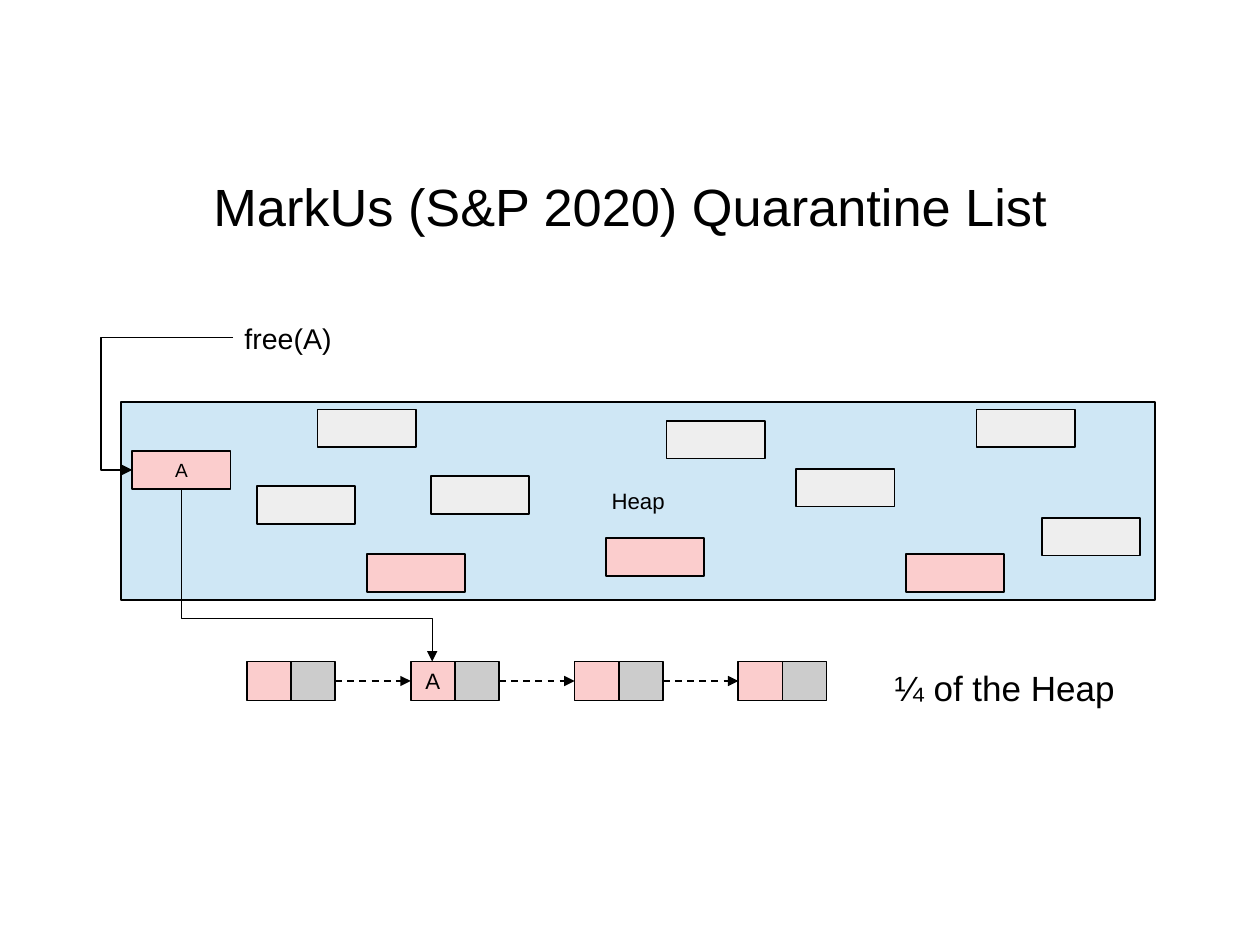
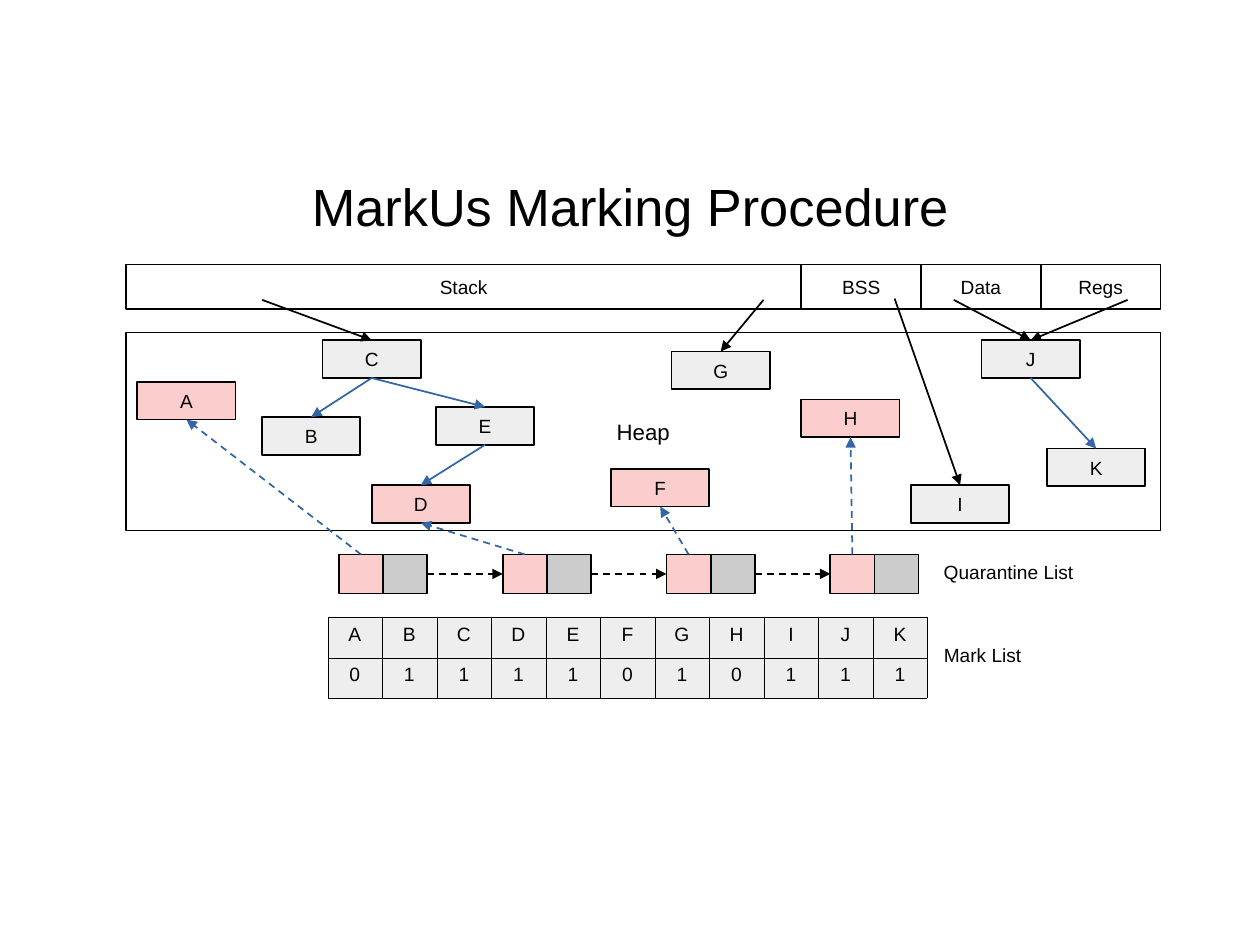
from dataclasses import dataclass

import lxml.etree
import pptx
import pptx.dml.color
import pptx.enum.dml
import pptx.enum.shapes
import pptx.enum.text
import pptx.oxml.ns
import pptx.util

Inches = pptx.util.Inches
Pt = pptx.util.Pt
RGBColor = pptx.dml.color.RGBColor
Kind = pptx.enum.shapes.MSO_CONNECTOR
Align = pptx.enum.text.PP_ALIGN
Anchor = pptx.enum.text.MSO_ANCHOR
qn = pptx.oxml.ns.qn

BLACK = RGBColor(0, 0, 0)
WHITE = RGBColor(0xFF, 0xFF, 0xFF)
PINK = RGBColor(0xFB, 0xCD, 0xCD)
PALE = RGBColor(0xEE, 0xEE, 0xEE)
GREY = RGBColor(0xCC, 0xCC, 0xCC)
SKY = RGBColor(0xCF, 0xE7, 0xF5)
BLUE = RGBColor(0x34, 0x65, 0xA4)
FONT = "Arial"
SMALL, MID, TITLE = 10.9, 12.7, 29.9

HEAP_W, HEAP_H = 8.21, 1.57
BLOCK_W, BLOCK_H = 0.78, 0.3
CELL_W, CELL_H, PITCH = 0.35, 0.31, 1.3
TOP, LEFT, BOTTOM, RIGHT = range(4)


@dataclass
class Block:
    """A heap block, placed from the heap's top left corner."""
    name: str
    x: float
    y: float


@dataclass
class Root:
    name: str
    width: float


@dataclass
class Ref:
    """A pointer from a spot in the roots to a block."""
    x: float
    y: float
    to: str


BLOCKS = [
    Block("A", 0.09, 0.39), Block("B", 1.08, 0.67), Block("C", 1.56, 0.06),
    Block("D", 1.95, 1.21), Block("E", 2.46, 0.59), Block("F", 3.85, 1.08),
    Block("G", 4.33, 0.15), Block("H", 5.36, 0.53), Block("I", 6.23, 1.21),
    Block("J", 6.79, 0.06), Block("K", 7.31, 0.92),
]
ROOTS = [Root("Stack", 5.36), Root("BSS", 0.95), Root("Data", 0.95), Root("Regs", 0.95)]
REFS = [Ref(2.08, 2.38, "C"), Ref(6.06, 2.38, "G"), Ref(8.95, 2.38, "J"),
        Ref(7.57, 2.38, "J"), Ref(7.1, 2.37, "I")]
LINKS = ["CB", "CE", "ED", "JK"]
MARKS = "01111010111"


def style(para, size: float, align=Align.CENTER) -> None:
    para.alignment = align
    para.font.name = FONT
    para.font.size = Pt(size)
    para.font.color.rgb = BLACK


def pad(frame, x: float, y: float) -> None:
    frame.margin_left = frame.margin_right = Inches(x)
    frame.margin_top = frame.margin_bottom = Inches(y)


def page(deck, text: str):
    """Add a slide with its title."""
    slide = deck.slides.add_slide(deck.slide_layouts[5])
    title = slide.shapes.title
    title.left, title.top = Inches(0.5), Inches(1.16)
    title.width, title.height = Inches(9), Inches(0.94)
    frame = title.text_frame
    frame.text = text
    frame.vertical_anchor = Anchor.MIDDLE
    pad(frame, 0, 0)
    style(frame.paragraphs[0], TITLE)
    return slide


def box(slide, x: float, y: float, w: float, h: float, fill: RGBColor,
        text: str = "", size: float = SMALL):
    shape = slide.shapes.add_shape(
        pptx.enum.shapes.MSO_SHAPE.RECTANGLE, Inches(x), Inches(y), Inches(w), Inches(h))
    shape.shadow.inherit = False
    shape.fill.solid()
    shape.fill.fore_color.rgb = fill
    shape.line.color.rgb = BLACK
    shape.line.width = Pt(1)
    if text:
        frame = shape.text_frame
        frame.text = text
        frame.word_wrap = False
        frame.vertical_anchor = Anchor.MIDDLE
        style(frame.paragraphs[0], size)
    return shape


def label(slide, x: float, y: float, w: float, h: float, text: str, size: float) -> None:
    frame = slide.shapes.add_textbox(Inches(x), Inches(y), Inches(w), Inches(h)).text_frame
    frame.word_wrap = True
    pad(frame, 0.09, 0.04)
    frame.text = text
    style(frame.paragraphs[0], size, Align.LEFT)


def finish(line, color: RGBColor, width: float, dash: bool = False) -> None:
    """Give a connector its pen and arrowhead, and no shadow."""
    line.line.color.rgb = color
    line.line.width = Pt(width)
    if dash:
        line.line.dash_style = pptx.enum.dml.MSO_LINE.DASH
    props = line._element.spPr
    lxml.etree.SubElement(props.find(qn("a:ln")), qn("a:tailEnd"), type="triangle")
    lxml.etree.SubElement(props, qn("a:effectLst"))


def arrow(slide, start: tuple, end: tuple, color: RGBColor = BLACK,
          dash: bool = False) -> None:
    """Draw from (x, y) or (shape, side) to (shape, side)."""
    line = slide.shapes.add_connector(Kind.STRAIGHT, 0, 0, 0, 0)
    if isinstance(start[0], float):
        line.begin_x, line.begin_y = Inches(start[0]), Inches(start[1])
    else:
        line.begin_connect(*start)
    line.end_connect(*end)
    finish(line, color, 1, dash)


def elbow(slide, x1: float, y1: float, x2: float, y2: float, bend: float,
          down: bool = False) -> None:
    """Draw a bent arrow; one that leaves downwards is a turned sideways one."""
    if down:
        mx, my, dx, dy = (x1 + x2) / 2, (y1 + y2) / 2, (x2 - x1) / 2, (y2 - y1) / 2
        x1, y1, x2, y2 = mx + dy, my - dx, mx - dy, my + dx
    line = slide.shapes.add_connector(
        Kind.ELBOW, Inches(x1), Inches(y1), Inches(x2), Inches(y2))
    props = line._element.spPr
    if down:
        props.find(qn("a:xfrm")).set("rot", str(270 * 60000))
    guides = props.find(qn("a:prstGeom")).get_or_add_avLst()
    lxml.etree.SubElement(guides, qn("a:gd"), name="adj1", fmla=f"val {round(bend * 100000)}")
    finish(line, BLACK, 0.75)


def heap(slide, x: float, y: float, fill: RGBColor, freed: str, named: str) -> dict:
    """Draw the heap; return its blocks by name."""
    box(slide, x, y, HEAP_W, HEAP_H, fill, "Heap", MID)
    return {
        b.name: box(slide, x + b.x, y + b.y, BLOCK_W, BLOCK_H,
                    PINK if b.name in freed else PALE, b.name if b.name in named else "")
        for b in BLOCKS
    }


def chain(slide, x: float, y: float, names: list[str]) -> list:
    """Draw the quarantine list; return the first cell of each node."""
    heads, last = [], None
    for i, name in enumerate(names):
        left = x + i * PITCH
        head = box(slide, left, y, CELL_W, CELL_H, PINK, name, MID)
        tail = box(slide, left + CELL_W, y, CELL_W, CELL_H, GREY)
        if last is not None:
            arrow(slide, (last, RIGHT), (head, LEFT), dash=True)
        heads.append(head)
        last = tail
    return heads


def marks(slide, x: float, y: float, w: float, h: float) -> None:
    rows = ["".join(b.name for b in BLOCKS), MARKS]
    table = slide.shapes.add_table(
        len(rows), len(MARKS), Inches(x), Inches(y), Inches(w), Inches(h)).table
    table.first_row = table.horz_banding = False
    for r, row in enumerate(rows):
        for c, text in enumerate(row):
            cell = table.cell(r, c)
            cell.text = text
            pad(cell, 0.09, 0.05)
            style(cell.text_frame.paragraphs[0], 11)
            props = cell._tc.get_or_add_tcPr()
            for side in ("lnL", "lnR", "lnT", "lnB"):
                edge = lxml.etree.SubElement(props, qn(f"a:{side}"), w=str(Pt(0.11)))
                ink = lxml.etree.SubElement(edge, qn("a:solidFill"))
                lxml.etree.SubElement(ink, qn("a:srgbClr"), val=str(BLACK))
            cell.fill.solid()
            cell.fill.fore_color.rgb = PALE


def free_slide(deck) -> None:
    slide = page(deck, "MarkUs (S&P 2020) Quarantine List")
    label(slide, 1.85, 2.51, 0.95, 0.34, "free(A)", 16.3)
    heap(slide, 0.96, 3.19, SKY, "ADFI", "A")
    chain(slide, 1.96, 5.25, ["", "A", "", ""])
    # The freed block moves to the list
    elbow(slide, 1.85, 2.68, 1.05, 3.73, 1.31)
    elbow(slide, 1.44, 3.88, 3.43, 5.25, 0.75, down=True)
    label(slide, 7.01, 5.25, 1.95, 0.4, "¼ of the Heap", 20)


def mark_slide(deck) -> None:
    slide = page(deck, "MarkUs Marking Procedure")
    blocks = heap(slide, 1, 2.64, WHITE, "ADFH", "ABCDEFGHIJK")
    # Roots and their pointers
    x = 1.0
    for root in ROOTS:
        box(slide, x, 2.1, root.width, 0.35, WHITE, root.name)
        x += root.width
    for ref in REFS:
        arrow(slide, (ref.x, ref.y), (blocks[ref.to], TOP))
    # Pointers between blocks
    for a, b in LINKS:
        arrow(slide, (blocks[a], BOTTOM), (blocks[b], TOP), BLUE)
    # Quarantine list and mark list
    for head, name in zip(chain(slide, 2.69, 4.4, [""] * 4), "ADFH"):
        arrow(slide, (head, TOP), (blocks[name], BOTTOM), BLUE, dash=True)
    label(slide, 7.4, 4.41, 1.47, 0.31, "Quarantine List", SMALL)
    marks(slide, 2.6, 4.9, 4.76, 0.64)
    label(slide, 7.4, 5.07, 0.99, 0.31, "Mark List", SMALL)


def main() -> None:
    deck = pptx.Presentation()
    deck.slide_width, deck.slide_height = Inches(10), Inches(7.5)
    free_slide(deck)
    mark_slide(deck)
    deck.save("out.pptx")


if __name__ == "__main__":
    main()
